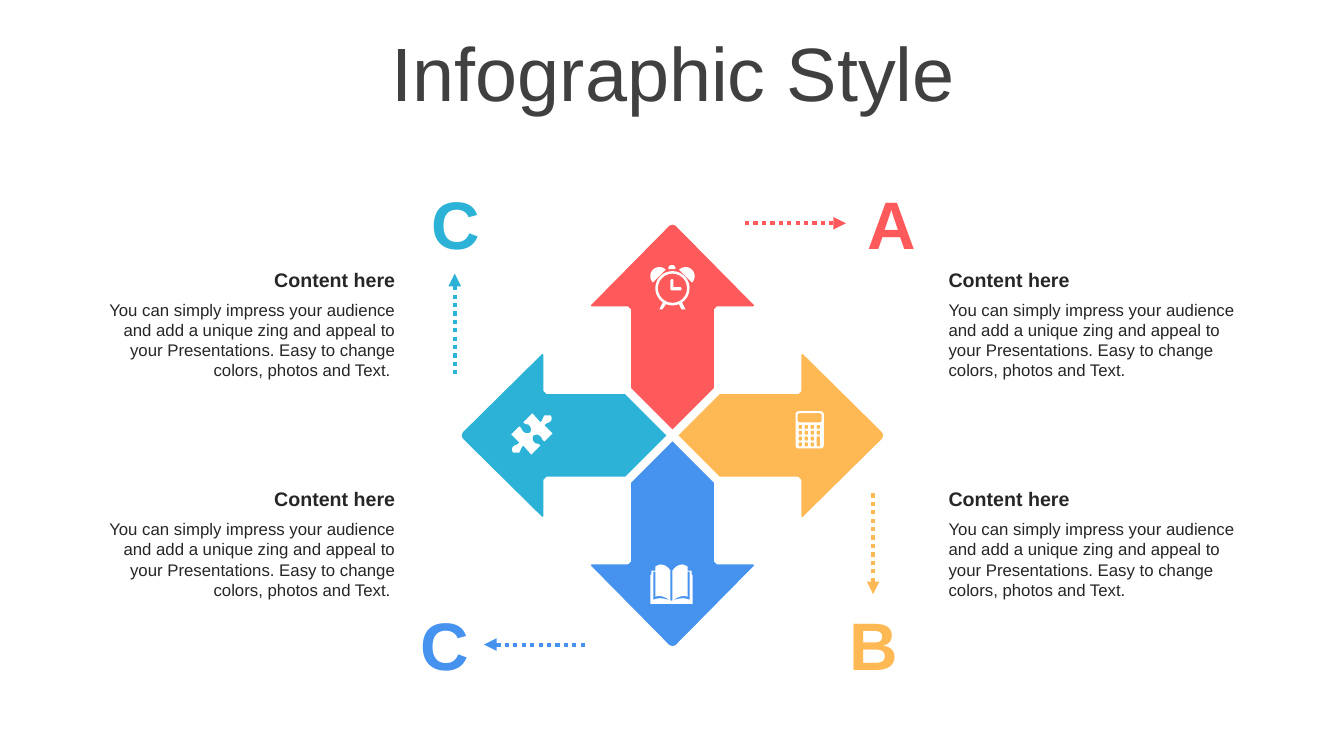
import math

import pptx
import pptx.dml.color
import pptx.enum.dml
import pptx.enum.shapes
import pptx.enum.text
import pptx.oxml.ns
import pptx.util
from lxml import etree
from pptx.util import Inches

COLORS = {
    "red": "FE5A5B",
    "amber": "FFB954",
    "blue": "4592EF",
    "cyan": "2CB2D7",
    "white": "FFFFFF",
    "title": "404040",
    "text": "262626",
}
ALIGN = pptx.enum.text.PP_ALIGN
ANCHOR = pptx.enum.text.MSO_ANCHOR
BODY = (
    "You can simply impress your audience and add a unique zing and appeal "
    "to your Presentations. Easy to change colors, photos and Text."
)


def color(name):
    return pptx.dml.color.RGBColor.from_string(COLORS[name])


def write_text(frame, text, size=12, tint="text", bold=False, align=ALIGN.LEFT,
               anchor=ANCHOR.TOP, spacing=None):
    frame.word_wrap = True
    frame.vertical_anchor = anchor
    para = frame.paragraphs[0]
    para.alignment = align
    para.line_spacing = spacing
    span = para.add_run()
    span.text = text
    span.font.name = "Arial"
    span.font.size = pptx.util.Pt(size)
    span.font.bold = bold
    span.font.color.rgb = color(tint)


def add_text(shapes, box, text, insets=None, **style):
    shape = shapes.add_textbox(*map(Inches, box))
    frame = shape.text_frame
    write_text(frame, text, **style)
    frame.auto_size = pptx.enum.text.MSO_AUTO_SIZE.SHAPE_TO_FIT_TEXT
    if insets:
        (frame.margin_left, frame.margin_top,
         frame.margin_right, frame.margin_bottom) = map(Inches, insets)
    return shape


def arc(center_x, center_y, radius, start, end, steps=24):
    angles = [math.radians(start + (end - start) * i / steps) for i in range(steps + 1)]
    return [(center_x + radius * math.cos(a), center_y + radius * math.sin(a)) for a in angles]


def rounded(left, top, width, height, radius):
    corners = [(left + width - radius, top + height - radius), (left + radius, top + height - radius),
               (left + radius, top + radius), (left + width - radius, top + radius)]
    return [point for i, (x, y) in enumerate(corners)
            for point in arc(x, y, radius, 90 * i, 90 * i + 90, 4)]


def flatten(steps, samples=6):
    points = []
    for step in steps:
        if len(step) == 2:
            points.append(step)
            continue
        knots = [points[-1], step[:2], step[2:4], step[4:]]
        for i in range(1, samples + 1):
            t = i / samples
            weights = ((1 - t) ** 3, 3 * t * (1 - t) ** 2, 3 * t * t * (1 - t), t ** 3)
            points.append(tuple(sum(w * k[axis] for w, k in zip(weights, knots)) for axis in (0, 1)))
    return points


def draw_outline(shapes, box, contours, tint):
    left, top = box[:2]
    builder = None
    for contour in contours:
        points = [(Inches(left + x), Inches(top + y)) for x, y in contour]
        if builder is None:
            builder = shapes.build_freeform(*points[0], scale=1.0)
        else:
            builder.move_to(*points[0])
        builder.add_line_segments(points[1:], close=True)
    shape = builder.convert_to_shape()
    shape.shadow.inherit = False
    shape.fill.solid()
    shape.fill.fore_color.rgb = color(tint)
    shape.line.fill.background()


def draw_title(page, box):
    title = page.shapes.title
    title.left, title.top, title.width, title.height = map(Inches, box)
    write_text(title.text_frame, "Infographic Style", size=54, tint="title",
               align=ALIGN.CENTER, anchor=ANCHOR.MIDDLE, spacing=0.9)


def draw_arrow_cross(page, box):
    left, top, width, height = box
    center = (left + width / 2, top + height / 2)
    edge = [(0.06, 0), (0.44, 0.38), (0.47, 0.41), (1.25, 0.41), (1.28, 0.44),
            (1.28, 0.8), (1.29, 0.81), (1.31, 0.79), (2.08, 0.03), (2.09, 0)]
    arrow = edge + [(x, -y) for x, y in edge[-2:0:-1]]
    group = page.shapes.add_group_shape()
    for tint, (dx, dy) in {"blue": (0, 1), "cyan": (-1, 0), "amber": (1, 0), "red": (0, -1)}.items():
        turned = [(x * dx - y * dy, x * dy + y * dx) for x, y in arrow]
        draw_outline(group.shapes, center, [turned], tint)


def draw_letter(page, box, letter, tint, direction, gap, site=None):
    left, top, width, height = box
    label = add_text(page.shapes, box, letter, insets=(0.05, 0, 0.03, 0), size=48,
                     tint=tint, bold=True, align=ALIGN.CENTER)
    x, y = left + width / 2, top + height / 2
    dx, dy = direction
    start = (x - dx * (gap + 1), y - dy * (gap + 1))
    end = (x - dx * gap, y - dy * gap)
    pointer = page.shapes.add_connector(
        pptx.enum.shapes.MSO_CONNECTOR.STRAIGHT, *map(Inches, start + end))
    pointer.line.color.rgb = color(tint)
    pointer.line.width = pptx.util.Pt(3)
    pointer.line.dash_style = pptx.enum.dml.MSO_LINE.ROUND_DOT
    qn = pptx.oxml.ns.qn
    etree.SubElement(pointer.line._get_or_add_ln(), qn("a:tailEnd"), type="triangle")
    etree.SubElement(pointer._element.spPr, qn("a:effectLst"))
    if site is not None:
        label.height = Inches(height)
        pointer.end_connect(label, site)


def draw_content(page, box, align):
    left, top, width, height = box
    group = page.shapes.add_group_shape()
    add_text(group.shapes, (left, top, width, 0.34), "Content here", size=14, bold=True,
             align=align, anchor=ANCHOR.MIDDLE)
    body = BODY + " " if align == ALIGN.RIGHT else BODY
    add_text(group.shapes, (left, top + 0.32, width, height - 0.32), body, align=align)


def draw_clock(page, box):
    hands = rounded(0.2, 0.14, 0.03, 0.11, 0.01)[:-5]
    hands = [(0.2, 0.15), (0.21, 0.14), (0.22, 0.14), (0.23, 0.15), (0.23, 0.22),
             (0.3, 0.22), (0.31, 0.23), (0.31, 0.24), (0.3, 0.25), (0.21, 0.25), (0.2, 0.24)]
    case = (arc(0.22, 0.23, 0.17, 124, 416) + [(0.35, 0.44), (0.31, 0.44)]
            + arc(0.22, 0.23, 0.17, 68, 112) + [(0.12, 0.44), (0.09, 0.44)])
    button = [(0.18, 0.04), (0.18, 0.02), (0.2, 0), (0.23, 0), (0.25, 0.02), (0.25, 0.04)]
    bells = [arc(0.09, 0.11, 0.09, 135, 315), arc(0.35, 0.11, 0.09, 225, 405)]
    draw_outline(page.shapes, box, [hands, arc(0.22, 0.23, 0.145, 0, 360), case, button, *bells], "white")


def draw_calculator(page, box):
    keys = [rounded(0.03 + 0.06 * column, 0.135 + 0.058 * row, 0.035, 0.04, 0.01)
            for column in range(4) for row in range(4) if column < 3 or row < 2]
    tall_key = rounded(0.21, 0.25, 0.035, 0.1, 0.01)
    screen = rounded(0.02, 0.02, 0.24, 0.09, 0.02)
    draw_outline(page.shapes, box, [rounded(0, 0, *box[2:], 0.03), screen, tall_key, *keys], "white")


def draw_puzzle(page, box):
    width, height = box[2:]
    half = flatten([
        (0.39, 0.02), (0.4, 0.03, 0.41, 0.06, 0.39, 0.08), (0.37, 0.1, 0.35, 0.09, 0.33, 0.12),
        (0.41, 0.2), (0.33, 0.28), (0.3, 0.26, 0.31, 0.24, 0.28, 0.22),
        (0.27, 0.21, 0.24, 0.21, 0.22, 0.22), (0.21, 0.24, 0.21, 0.27, 0.23, 0.29),
        (0.25, 0.31, 0.26, 0.29, 0.29, 0.32), (0.2, 0.41), (0.12, 0.32),
        (0.09, 0.35, 0.1, 0.36, 0.08, 0.39)])
    draw_outline(page.shapes, box, [half + [(width - x, height - y) for x, y in half]], "white")


def draw_book(page, box):
    leaf = flatten([
        (0.2, 0.06), (0.17, 0.02, 0.14, 0, 0.1, 0), (0.09, 0, 0.07, 0.01, 0.05, 0.02),
        (0.05, 0.32), (0.09, 0.3, 0.15, 0.32, 0.2, 0.36)])
    cover = flatten([
        (0.05, 0.06), (0.01, 0.06), (0.01, 0.1), (0, 0.1), (0, 0.39), (0.21, 0.39), (0.21, 0.36),
        (0.14, 0.34, 0.1, 0.32, 0.03, 0.35), (0.03, 0.07), (0.05, 0.07)])
    halves = [leaf, cover]
    mirrored = [[(box[2] - x, y) for x, y in contour] for contour in halves]
    draw_outline(page.shapes, box, halves + mirrored, "white")


def main():
    deck = pptx.Presentation()
    deck.slide_width, deck.slide_height = Inches(13.33), Inches(7.5)
    page = deck.slides.add_slide(deck.slide_layouts[5])
    draw_title(page, (0.35, 0.37, 12.66, 0.79))
    draw_arrow_cross(page, (4.58, 2.23, 4.18, 4.18))
    for left, top, letter, tint, direction, gap, site in [
        (3.96, 5.99, "C", "blue", (-1, 0), 0.4, None),
        (8.39, 1.81, "A", "red", (1, 0), 0.44, 1),
        (8.22, 5.99, "B", "amber", (0, 1), 0.5, None),
        (4.07, 1.81, "C", "cyan", (0, -1), 0.5, None),
    ]:
        draw_letter(page, (left, top, 0.88, 0.81), letter, tint, direction, gap, site)
    for left, align in ((9.31, ALIGN.LEFT), (0.88, ALIGN.RIGHT)):
        for top in (2.6, 4.78):
            draw_content(page, (left, top, 3.14, 1.23), align)
    draw_clock(page, (6.45, 2.63, 0.44, 0.44))
    draw_calculator(page, (7.89, 4.08, 0.28, 0.37))
    draw_puzzle(page, (5.07, 4.1, 0.41, 0.41))
    draw_book(page, (6.45, 5.6, 0.42, 0.39))
    deck.save("out.pptx")


if __name__ == "__main__":
    main()
